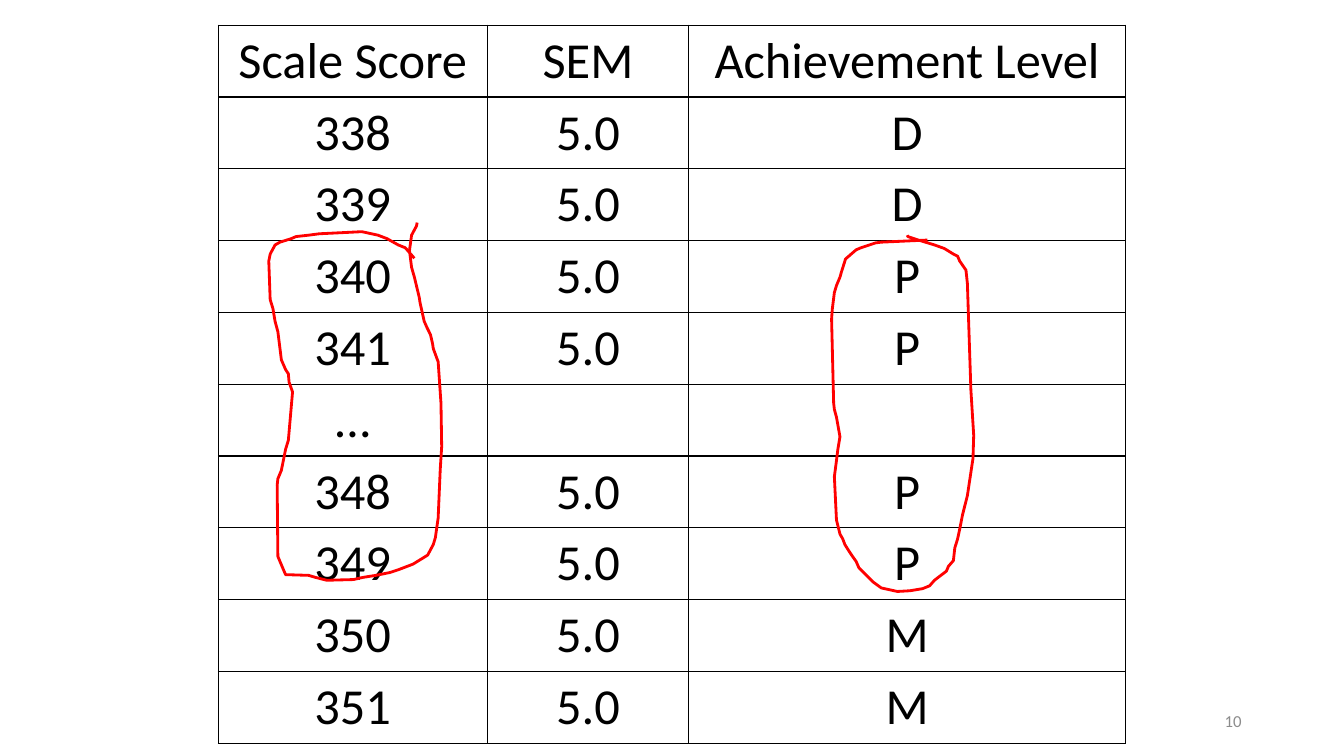
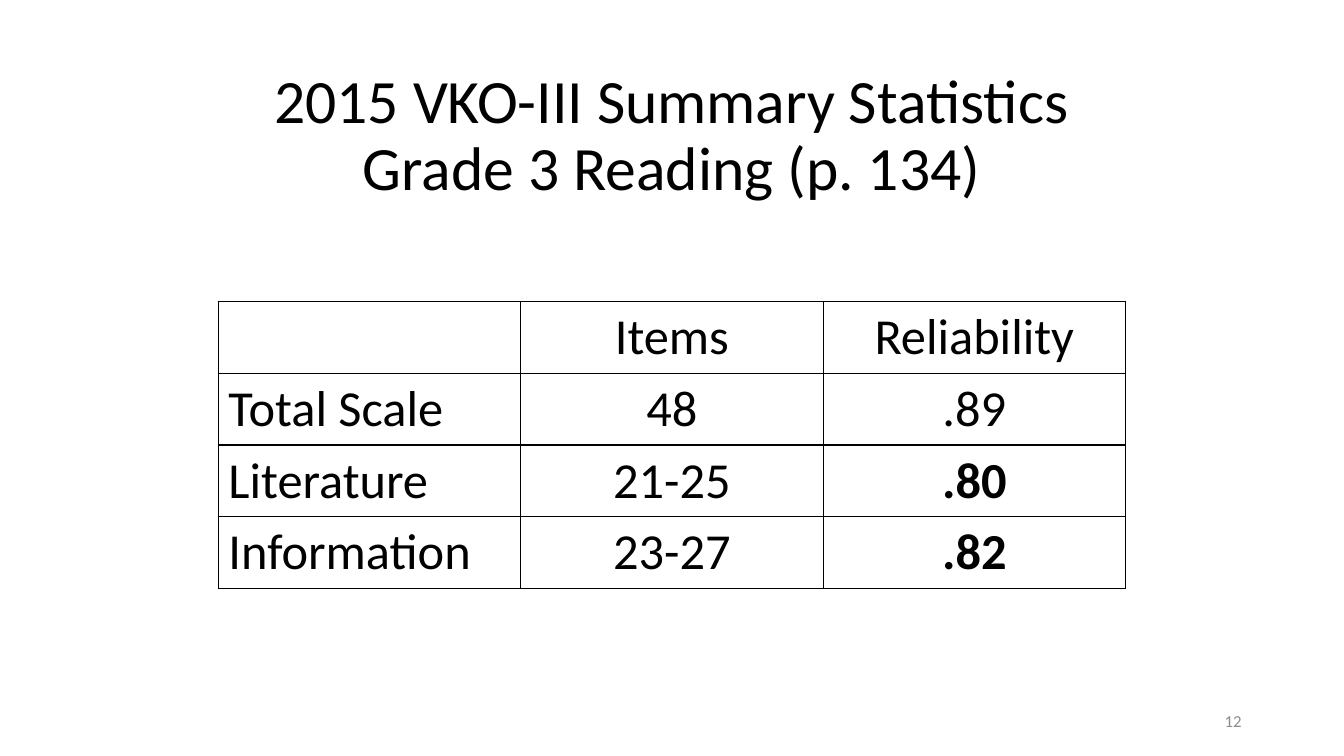
from dataclasses import dataclass

from lxml.etree import SubElement
from pptx import Presentation
from pptx.dml.color import RGBColor
from pptx.enum.text import MSO_ANCHOR as Anchor, PP_ALIGN as Align
from pptx.oxml.ns import qn
from pptx.util import Pt

BLACK = RGBColor(0x00, 0x00, 0x00)
GREY = RGBColor(0x8C, 0x8C, 0x8C)
RED = RGBColor(0xFF, 0x00, 0x00)

FONT = "Calibri"
BLANK_LAYOUT = 6
CONTENT_LEFT, CONTENT_WIDTH = 156, 648
ROW_HEIGHT = 51.3
CELL_SIZE = 36

Points = list[tuple[float, float]]


@dataclass(frozen=True)
class TableContent:
    top: float
    column_widths: list[float]
    rows: list[list[str]]
    left_labels: bool = False
    bold_texts: tuple[str, ...] = ()


SCORES = TableContent(
    top=18,
    column_widths=[192, 144, 312],
    rows=[
        ["Scale Score", "SEM", "Achievement Level"],
        ["338", "5.0", "D"],
        ["339", "5.0", "D"],
        ["340", "5.0", "P"],
        ["341", "5.0", "P"],
        ["…", "", ""],
        ["348", "5.0", "P"],
        ["349", "5.0", "P"],
        ["350", "5.0", "M"],
        ["351", "5.0", "M"],
    ],
)
RELIABILITY = TableContent(
    top=215.25,
    column_widths=[CONTENT_WIDTH / 3] * 3,
    rows=[
        ["", "Items", "Reliability"],
        ["Total Scale", "48", ".89"],
        ["Literature", "21-25", ".80"],
        ["Information", "23-27", ".82"],
    ],
    left_labels=True,
    bold_texts=(".80", ".82"),
)

LEVEL_LOOP: Points = [
    (662.5, 171.5), (629.5, 173), (625.5, 173.5), (615, 177), (611.5, 178.5),
    (604, 185), (601, 194.5), (600, 198), (597.5, 204), (596, 209),
    (594.5, 221), (594, 228), (595.5, 288), (596, 292.5), (597.5, 298),
    (600, 312), (598.5, 321), (597.5, 329), (596, 340.5), (597.5, 371.5),
    (600, 381.5), (602, 385), (603.5, 389), (606, 393), (609, 397.5),
    (611.5, 401), (613.5, 405.5), (619, 411), (624, 416), (629.5, 420),
    (641, 422.5), (650, 422), (659, 420.5), (664, 418.5), (667.5, 414.5),
    (676, 408), (677.5, 404.5), (681, 400.5), (682, 391.5), (684, 385),
    (685.5, 378), (687.5, 368), (689, 362), (691, 354), (695, 327.5),
    (695.5, 311), (693.5, 278.5), (691, 202.5), (690, 193), (685.5, 186.5),
    (684, 183), (681, 181.5), (674.5, 177.5), (667.5, 175), (656, 171.5),
    (648.5, 169), (648, 168),
]
SCORE_LOOP: Points = [
    (296, 184.5), (289.5, 177), (284.5, 175), (276.5, 170.5), (270, 168),
    (258.5, 165.5), (228, 167), (220.5, 168), (211.5, 169), (208, 170.5),
    (200, 173), (196.5, 175), (193, 181.5), (192, 186.5), (193, 214),
    (195, 220.5), (196.5, 229.5), (198.5, 237), (201, 257), (204, 264),
    (206, 267), (206.5, 273), (209, 280), (206, 314.5), (204, 321),
    (202.5, 328.5), (201, 336), (198.5, 342), (198, 346.5), (198.5, 397.5),
    (202.5, 407), (204, 410.5), (220.5, 411), (225.5, 412.5), (233.5, 414.5),
    (252.5, 414), (259, 412.5), (268.5, 411), (278.5, 409), (284.5, 407),
    (295, 403), (301.5, 399), (305.5, 396.5), (309.5, 389), (311, 384),
    (313, 370), (314.5, 335), (315.5, 319), (315, 288), (313, 258.5),
    (309.5, 249), (309, 245.5), (307.5, 239), (305, 234), (303, 229.5),
    (300, 216), (299.5, 212.5), (296, 198), (294, 191), (292.5, 179),
    (294, 168), (297.5, 161.5), (298, 159),
]


def write_text(frame, *lines: str, size: float, color: RGBColor = BLACK,
               bold: bool = False, align: Align = Align.CENTER,
               line_spacing: float | None = None) -> None:
    """Fill the frame with one paragraph, broken between the given lines."""
    paragraph = frame.paragraphs[0]
    paragraph.alignment = align
    paragraph.line_spacing = line_spacing
    for index, line in enumerate(lines):
        if index:
            paragraph.add_line_break()
        run = paragraph.add_run()
        run.text = line
        run.font.name = FONT
        run.font.size = Pt(size)
        run.font.bold = bold
        run.font.color.rgb = color


def add_text_box(slide, left: float, top: float, width: float, height: float,
                 *lines: str, **text_format) -> None:
    box = slide.shapes.add_textbox(Pt(left), Pt(top), Pt(width), Pt(height))
    box.text_frame.word_wrap = True
    box.text_frame.vertical_anchor = Anchor.MIDDLE
    write_text(box.text_frame, *lines, **text_format)


def add_title(slide, *lines: str) -> None:
    add_text_box(slide, CONTENT_LEFT, 21.6, CONTENT_WIDTH, 152.6, *lines,
                 size=44, line_spacing=0.9)


def add_slide_number(slide, number: int) -> None:
    add_text_box(slide, 678, 500.5, 216, 28.75, str(number),
                 size=12, color=GREY, align=Align.RIGHT)


def outline_cell(cell) -> None:
    properties = cell._tc.get_or_add_tcPr()
    for side in ("a:lnL", "a:lnR", "a:lnT", "a:lnB"):
        border = SubElement(properties, qn(side), w=str(Pt(1)))
        fill = SubElement(border, qn("a:solidFill"))
        SubElement(fill, qn("a:srgbClr"), val=str(BLACK))


def add_table(slide, content: TableContent) -> None:
    row_count = len(content.rows)
    table = slide.shapes.add_table(
        row_count, len(content.column_widths), Pt(CONTENT_LEFT), Pt(content.top),
        Pt(CONTENT_WIDTH), Pt(ROW_HEIGHT * row_count)).table
    table.first_row = table.horz_banding = False
    for column, width in zip(table.columns, content.column_widths):
        column.width = Pt(width)
    for row, texts in zip(table.rows, content.rows):
        row.height = Pt(ROW_HEIGHT)
        for index, (cell, text) in enumerate(zip(row.cells, texts)):
            outline_cell(cell)
            cell.fill.background()
            is_label = content.left_labels and index == 0
            write_text(cell.text_frame, text, size=CELL_SIZE,
                       bold=text in content.bold_texts,
                       align=Align.LEFT if is_label else Align.CENTER)


def add_pen_stroke(slide, points: Points) -> None:
    start, *others = [(Pt(x), Pt(y)) for x, y in points]
    builder = slide.shapes.build_freeform(*start)
    builder.add_line_segments(others, close=False)
    stroke = builder.convert_to_shape()
    stroke.shadow.inherit = False
    stroke.fill.background()
    stroke.line.color.rgb = RED
    stroke.line.width = Pt(2)


def add_numbered_slide(presentation, number: int):
    slide = presentation.slides.add_slide(presentation.slide_layouts[BLANK_LAYOUT])
    add_slide_number(slide, number)
    return slide


def main() -> None:
    presentation = Presentation()
    presentation.slide_width, presentation.slide_height = Pt(960), Pt(540)

    scores_slide = add_numbered_slide(presentation, 10)
    add_table(scores_slide, SCORES)
    for loop in (LEVEL_LOOP, SCORE_LOOP):
        add_pen_stroke(scores_slide, loop)

    reliability_slide = add_numbered_slide(presentation, 12)
    add_title(reliability_slide, "2015 VKO-III Summary Statistics",
              "Grade 3 Reading (p. 134)")
    add_table(reliability_slide, RELIABILITY)

    presentation.save("out.pptx")


if __name__ == "__main__":
    main()
